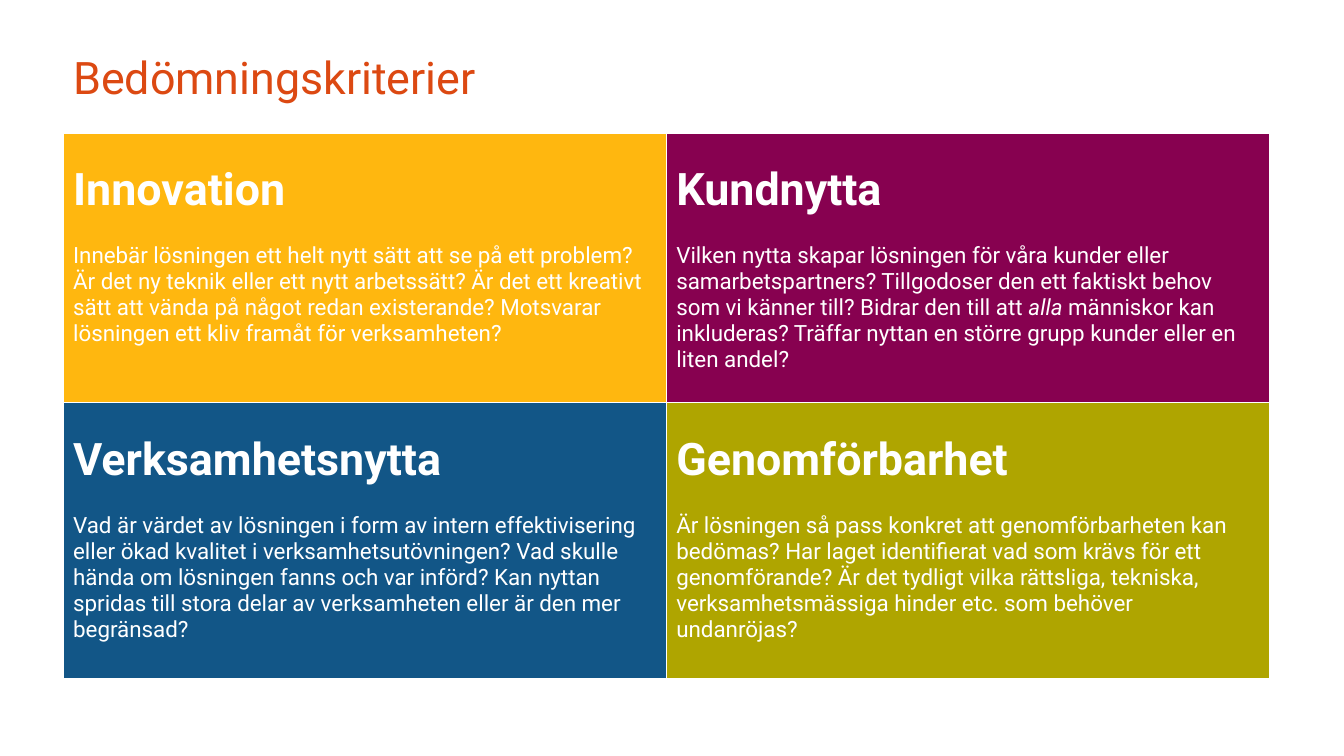
"""Builds a slide with four assessment criteria in a coloured two-by-two table."""
import lxml.etree
import pptx
import pptx.dml.color
import pptx.enum.text
import pptx.oxml
import pptx.oxml.ns
import pptx.util

Cm = pptx.util.Cm


def rgb(code):
    return pptx.dml.color.RGBColor.from_string(code)


def write(p, text, size=16, color="FFFFFF", bold=False, italic=False):
    r = p.add_run()
    r.text = text
    r.font.name = "Roboto"
    r.font.size = pptx.util.Pt(size)
    r.font.color.rgb = rgb(color)
    r.font.bold = bold
    r.font.italic = italic


criteria = [
    ("Innovation", "FFB70F", [
        "Innebär lösningen ett helt nytt sätt att se på ett problem? Är det ny teknik "
        "eller ett nytt arbetssätt? Är det ett kreativt sätt att vända på något redan "
        "existerande? Motsvarar lösningen ett kliv framåt för verksamheten?"]),
    ("Kundnytta", "870150", [
        "Vilken nytta skapar lösningen för våra kunder eller samarbetspartners? "
        "Tillgodoser den ett faktiskt behov som vi känner till? Bidrar den till att ",
        "alla",
        " människor kan inkluderas? Träffar nyttan en större grupp kunder eller en "
        "liten andel?"]),
    ("Verksamhetsnytta", "125687", [
        "Vad är värdet av lösningen i form av intern effektivisering eller ökad kvalitet "
        "i verksamhetsutövningen? Vad skulle hända om lösningen fanns och var införd? "
        "Kan nyttan spridas till stora delar av verksamheten eller är den mer begränsad?"]),
    ("Genomförbarhet", "AFA500", [
        "Är lösningen så pass konkret att genomförbarheten kan bedömas? Har laget "
        "identifierat vad som krävs för ett genomförande? Är det tydligt vilka rättsliga, "
        "tekniska, verksamhetsmässiga hinder etc. som behöver undanröjas?"]),
]

prs = pptx.Presentation()
prs.slide_width, prs.slide_height = Cm(33.87), Cm(19.05)
s = prs.slides.add_slide(prs.slide_layouts[5])

title = s.shapes.title
title.left, title.top, title.width, title.height = Cm(1.59), Cm(1.12), Cm(30.94), Cm(1.63)
tf = title.text_frame
tf.auto_size = pptx.enum.text.MSO_AUTO_SIZE.NONE
tf.vertical_anchor = pptx.enum.text.MSO_ANCHOR.TOP
tf.paragraphs[0].alignment = pptx.enum.text.PP_ALIGN.LEFT
write(tf.paragraphs[0], "Bedömningskriterier", size=32, color="DC4912")

table = s.shapes.add_table(2, 2, Cm(1.59), Cm(3.35), Cm(30.4), Cm(13.75)).table
table.first_row = table.horz_banding = False
table.rows[0].height, table.rows[1].height = Cm(6.8), Cm(6.95)

for i, (heading, color, parts) in enumerate(criteria):
    cell = table.cell(i // 2, i % 2)
    cell.margin_top = Cm(0.79)
    tcPr = cell._tc.get_or_add_tcPr()
    for side in ("lnL", "lnR", "lnT", "lnB"):
        ln = lxml.etree.SubElement(tcPr, pptx.oxml.ns.qn("a:" + side), w="12700")
        fill = lxml.etree.SubElement(ln, pptx.oxml.ns.qn("a:solidFill"))
        lxml.etree.SubElement(fill, pptx.oxml.ns.qn("a:srgbClr"), val="FFFFFF")
    cell.fill.solid()
    cell.fill.fore_color.rgb = rgb(color)

    p = cell.text_frame.paragraphs[0]
    p.space_after = pptx.util.Pt(18.75)
    write(p, heading, size=32, bold=True)
    p = cell.text_frame.add_paragraph()
    for text in parts:
        write(p, text, italic=text == "alla")

prs.save("out.pptx")
